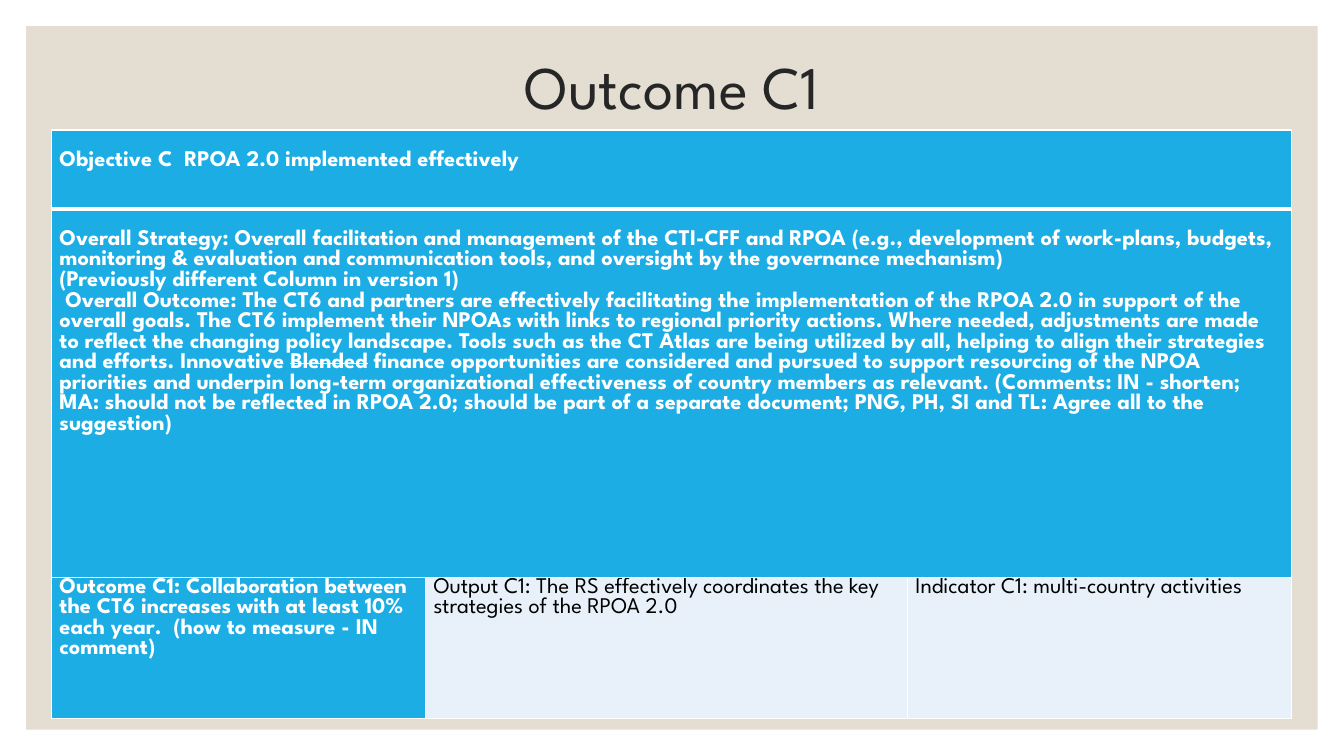
from copy import deepcopy
from dataclasses import dataclass

from lxml.etree import SubElement
from pptx import Presentation
from pptx.dml.color import RGBColor
from pptx.enum.shapes import MSO_SHAPE
from pptx.enum.text import MSO_ANCHOR, PP_ALIGN
from pptx.oxml.ns import qn
from pptx.util import Inches, Pt


@dataclass(frozen=True)
class Theme:
    font: str = "League Spartan"
    panel: str = "E3DED1"
    accent: str = "1CADE4"
    pale: str = "E8F1FA"
    white: str = "FFFFFF"
    black: str = "000000"
    title: str = "262626"
    title_size: float = 43.2
    body_size: float = 16
    border: float = 1
    heading_border: float = 3


THEME = Theme()
WIDTH, HEIGHT = Inches(13.33), Inches(7.5)
PANEL_MARGIN = Inches(0.26)
TABLE_LEFT, TABLE_TOP = Inches(0.51), Inches(1.29)
COLUMNS = [3.71, 4.78, 3.81]
ROWS = [0.78, 3.66, 1.4]
SIDE_INSET, HEADING_INSET = 0.08, 0.21

OBJECTIVE = ["Objective C  RPOA 2.0 implemented effectively"]
STRATEGY = [
    "Overall Strategy: Overall facilitation and management of the CTI-CFF and RPOA "
    "(e.g., development of work-plans, budgets, monitoring & evaluation and "
    "communication tools, and oversight by the governance mechanism)\v"
    "(Previously different Column in version 1)",
    " Overall Outcome: The CT6 and partners are effectively facilitating the "
    "implementation of the RPOA 2.0 in support of the overall goals. The CT6 implement "
    "their NPOAs with links to regional priority actions. Where needed, adjustments are "
    "made to reflect the changing policy landscape. Tools such as the CT Atlas are being "
    "utilized by all, helping to align their strategies and efforts. Innovative "
    "~Blended~ finance opportunities are considered and pursued to support resourcing of "
    "the NPOA priorities and underpin long-term organizational effectiveness of country "
    "members as relevant. (Comments: IN - shorten; MA: should not be reflected in RPOA "
    "2.0; should be part of a separate document; PNG, PH, SI and TL: Agree all to the "
    "suggestion)",
]
OUTCOME = ["Outcome C1: Collaboration between the CT6 increases with at least 10% each "
           "year.  (how to measure - IN comment)"]
OUTPUT = ["Output C1: The RS effectively coordinates the key strategies of the RPOA 2.0"]
INDICATOR = ["Indicator C1: multi-country activities"]


def style_run(r, size, color, bold=False):
    r.font.name = THEME.font
    r.font.size = Pt(size)
    r.font.bold = bold
    r.font.color.rgb = RGBColor.from_string(color)


def write_paragraph(p, text, size, color, bold):
    """Write text in which ~marks~ enclose struck-out words and \\v breaks a line."""
    for i, part in enumerate(text.split("~")):
        for j, line in enumerate(part.split("\v")):
            if j:
                p.add_line_break()
            r = p.add_run()
            r.text = line
            style_run(r, size, color, bold)
            if i % 2:
                r._r.get_or_add_rPr().set("strike", "sngStrike")
    for br in p._p.findall(qn("a:br")):
        br.append(deepcopy(p.runs[0]._r.rPr))


def set_borders(cell, bottom):
    tc_pr = cell._tc.get_or_add_tcPr()
    for side in "LRTB":
        width = bottom if side == "B" else THEME.border
        ln = SubElement(tc_pr, qn(f"a:ln{side}"), w=str(Pt(width)))
        fill = SubElement(ln, qn("a:solidFill"))
        SubElement(fill, qn("a:srgbClr"), val=THEME.white)


def fill_cell(cell, paragraphs, fill, color, bold, top=0):
    cell.fill.solid()
    cell.fill.fore_color.rgb = RGBColor.from_string(fill)
    cell.margin_left = cell.margin_right = Inches(SIDE_INSET)
    cell.margin_top, cell.margin_bottom = Inches(top), 0
    tf = cell.text_frame
    for i, text in enumerate(paragraphs):
        p = tf.add_paragraph() if i else tf.paragraphs[0]
        write_paragraph(p, text, THEME.body_size, color, bold)


def add_panel(slide):
    sp = slide.shapes.add_shape(
        MSO_SHAPE.RECTANGLE, PANEL_MARGIN, PANEL_MARGIN,
        WIDTH - 2 * PANEL_MARGIN, HEIGHT - 2 * PANEL_MARGIN)
    sp.shadow.inherit = False
    sp.fill.solid()
    sp.fill.fore_color.rgb = RGBColor.from_string(THEME.panel)
    sp.line.fill.background()


def add_title(slide, text):
    width = Inches(11)
    sp = slide.shapes.add_textbox((WIDTH - width) // 2, Inches(0.5), width, Inches(0.79))
    tf = sp.text_frame
    tf.word_wrap = True
    tf.vertical_anchor = MSO_ANCHOR.MIDDLE
    p = tf.paragraphs[0]
    p.text = text
    p.alignment = PP_ALIGN.CENTER
    p.line_spacing = 0.9
    style_run(p.runs[0], THEME.title_size, THEME.title)


def add_outcome_table(slide):
    table = slide.shapes.add_table(
        len(ROWS), len(COLUMNS), TABLE_LEFT, TABLE_TOP,
        Inches(sum(COLUMNS)), Inches(sum(ROWS))).table
    for column, width in zip(table.columns, COLUMNS):
        column.width = Inches(width)
    for i, (row, height) in enumerate(zip(table.rows, ROWS)):
        row.height = Inches(height)
        for cell in row.cells:
            set_borders(cell, THEME.border if i else THEME.heading_border)

    last = len(COLUMNS) - 1
    for i, paragraphs in enumerate([OBJECTIVE, STRATEGY]):
        table.cell(i, 0).merge(table.cell(i, last))
        fill_cell(table.cell(i, 0), paragraphs, THEME.accent, THEME.white, True,
                  HEADING_INSET)
    fill_cell(table.cell(2, 0), OUTCOME, THEME.accent, THEME.white, True)
    for j, paragraphs in enumerate([OUTPUT, INDICATOR], 1):
        fill_cell(table.cell(2, j), paragraphs, THEME.pale, THEME.black, False)


def main():
    prs = Presentation()
    prs.slide_width, prs.slide_height = WIDTH, HEIGHT
    slide = prs.slides.add_slide(prs.slide_layouts[6])
    add_panel(slide)
    add_title(slide, "Outcome C1")
    add_outcome_table(slide)
    prs.save("out.pptx")


if __name__ == "__main__":
    main()
